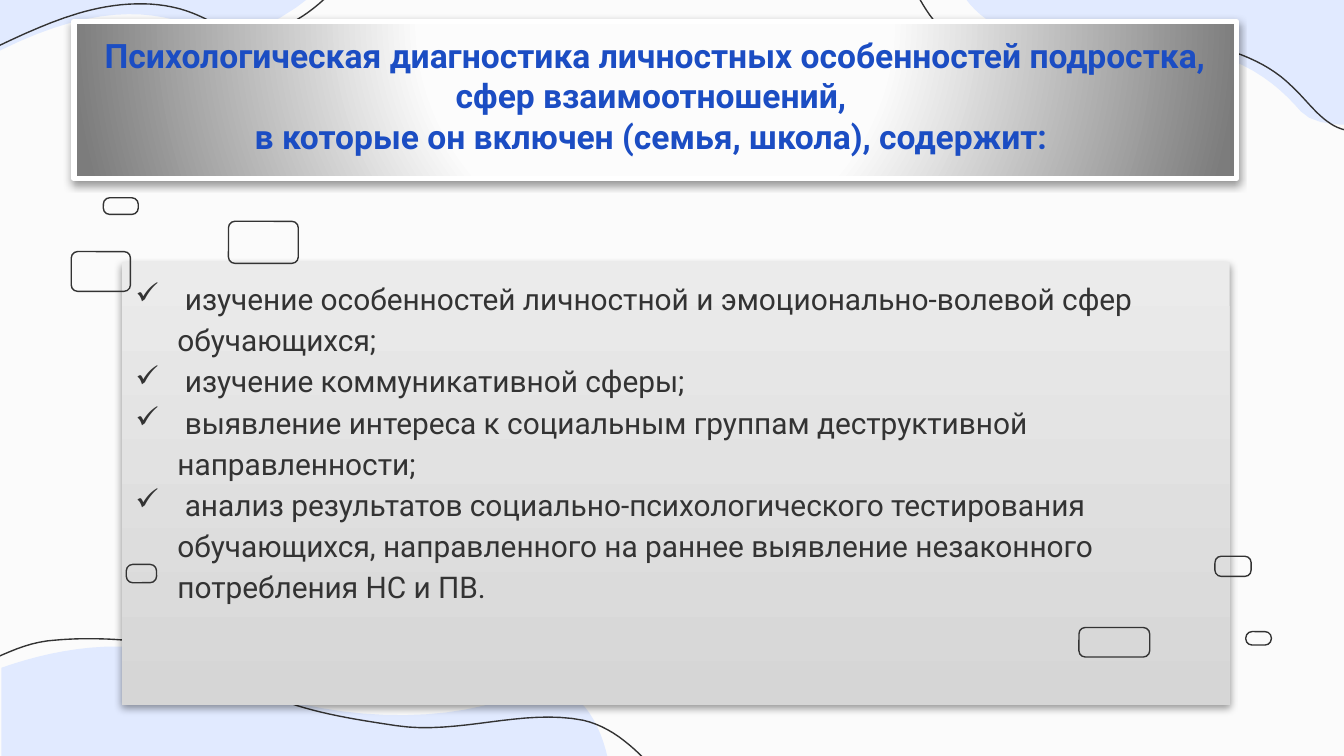
from lxml.etree import SubElement
from pptx import Presentation
from pptx.dml.color import RGBColor
from pptx.enum.shapes import MSO_SHAPE
from pptx.enum.text import MSO_ANCHOR, PP_ALIGN
from pptx.oxml.ns import qn
from pptx.util import Pt

COLORS = {
    "background": "FBFBFB", "wave": "E1EAFF", "ink": "333333", "title": "1B4DC3",
    "frame": "FFFFFF", "glow": "FCFCFC", "steel": "7C7C7C",
    "panel_top": "EBEBEB", "panel_bottom": "D6D6D6", "shadow": "000000",
}

WAVES = [
    [(513.4, -7.2), (517.7, 2.2), (535.7, 27.4), (588.2, 23.8), (652.3, 19.4), (679, 38.9),
     (697, 59.8), (715, 79.9), (820, 57.6), (820, -7.2)],
    [(0.7, 409), (109, 409), (218, 409), (326.2, 409), (322.6, 391), (311, 357.8),
     (277.2, 372.2), (231.8, 391), (158.4, 385.2), (109.4, 357.8), (71.3, 336.2),
     (20.9, 350.6), (0.7, 357.8)],
    [(-81.4, 28.1), (-74.2, 34.6), (-47.5, 51.1), (-0.7, 27.4), (56.9, -1.4), (88.6, 6.5),
     (113.8, 18), (138.2, 29.5), (226.1, -32.4), (200.9, -91.4)],
]
OUTLINES = [
    [(771.8, 60.5), (756, 68.4), (735.8, 74.9), (718.6, 69.1), (707.8, 65.5), (700.6, 54),
     (691.9, 46.1), (677.5, 31.7), (655.2, 24.5), (635, 22.3), (595.4, 18), (554.4, 28.8),
     (515.5, 20.9), (501.1, 18), (493.2, 0.7), (486.7, -12.2)],
    [(-37.4, 364.3), (-15.1, 362.2), (2.9, 346.3), (25.2, 343.4), (43.9, 341.3), (64.1, 342),
     (83.5, 344.9), (105.1, 347), (122.4, 360), (141.8, 371.5), (164.2, 381.6),
     (188.6, 385.2), (212.4, 388.8), (245.5, 393.8), (280.1, 379.4), (312.5, 385.9),
     (331.2, 390.2), (344.2, 405.4), (357.1, 419)],
    [(182.9, -10.1), (171.4, 3.6), (154.8, 16.6), (136.8, 18), (125.3, 19.4), (114.5, 11.5),
     (103.7, 7.2), (84.2, -0.7), (61.2, 1.4), (41.8, 7.2), (3.6, 18.7), (-33.1, 44.6),
     (-68.4, 52.6), (-82.8, 55.4), (-97.2, 43.2), (-108, 33.1)],
]
RIGHT_TILES = [(578, 336.2, 37.9, 15.8), (650.9, 298, 19.4, 10.8), (667.4, 338.4, 13.7, 7.2)]
LEFT_TILES = [(67.7, 302.4, 16.2, 9.8), (122.4, 118.6, 37.4, 22.5),
              (55.4, 106, 18.7, 8.9), (38.2, 134.8, 31.7, 21.3)]

TITLE_LINES = [
    "Психологическая диагностика личностных особенностей подростка, сфер взаимоотношений, ",
    "в которые он включен (семья, школа), содержит: ",
]
TASKS = [
    " изучение особенностей личностной и эмоционально-волевой сфер обучающихся;",
    " изучение коммуникативной сферы;",
    " выявление интереса к социальным группам деструктивной направленности;",
    " анализ результатов социально-психологического тестирования обучающихся, "
    "направленного на раннее выявление незаконного потребления НС и ПВ.",
]


def rgb(name):
    return RGBColor.from_string(COLORS[name])


def trace(nodes, steps=16):
    points = [nodes[0]]
    for first in range(0, len(nodes) - 1, 3):
        a, b, c, d = nodes[first:first + 4]
        for step in range(1, steps + 1):
            t = step / steps
            u = 1 - t
            points.append(tuple(
                u**3 * a[i] + 3 * u * u * t * b[i] + 3 * u * t * t * c[i] + t**3 * d[i]
                for i in (0, 1)))
    return [(Pt(x), Pt(y)) for x, y in points]


class Board:
    """Draws styled elements on the current slide."""

    font = "Roboto"

    def __init__(self, slide):
        self.slide = slide
        slide.background.fill.solid()
        slide.background.fill.fore_color.rgb = rgb("background")

    def outline(self, shape):
        shape.shadow.inherit = False
        shape.fill.background()
        shape.line.color.rgb = rgb("ink")
        shape.line.width = Pt(0.75)

    def curve(self, nodes, filled):
        start, *rest = trace(nodes)
        builder = self.slide.shapes.build_freeform(*start)
        builder.add_line_segments(rest, close=filled)
        curve = builder.convert_to_shape()
        self.outline(curve)
        if filled:
            curve.fill.solid()
            curve.fill.fore_color.rgb = rgb("wave")
            curve.line.fill.background()

    def tiles(self, boxes):
        group = self.slide.shapes.add_group_shape()
        for box in boxes:
            tile = group.shapes.add_shape(MSO_SHAPE.ROUNDED_RECTANGLE, *map(Pt, box))
            tile.adjustments[0] = min(0.5, 3.4 / min(box[2:]))
            self.outline(tile)

    def panel(self, box, stops, radial=False):
        panel = self.slide.shapes.add_textbox(*map(Pt, box))
        frame = panel.text_frame
        frame.word_wrap = True
        frame.vertical_anchor = MSO_ANCHOR.TOP
        frame.margin_left = frame.margin_right = Pt(7.2)
        frame.margin_top = frame.margin_bottom = Pt(7.2)
        panel.fill.gradient()
        gradient = panel.element.spPr.find(qn("a:gradFill"))
        for child in list(gradient):
            gradient.remove(child)
        stop_list = SubElement(gradient, qn("a:gsLst"))
        for position, name in stops:
            stop = SubElement(stop_list, qn("a:gs"), pos=str(position * 1000))
            SubElement(stop, qn("a:srgbClr"), val=COLORS[name])
        if radial:
            circle = SubElement(gradient, qn("a:path"), path="circle")
            SubElement(circle, qn("a:fillToRect"), l="50000", t="0", r="50000", b="100000")
            panel.line.color.rgb = rgb("frame")
            panel.line.width = Pt(3)
        else:
            SubElement(gradient, qn("a:lin"), ang="5400000", scaled="0")
        effects = SubElement(panel.element.spPr, qn("a:effectLst"))
        shadow = SubElement(effects, qn("a:outerShdw"), blurRad=str(Pt(4)), dist=str(Pt(2)),
                            dir="5400000", rotWithShape="0")
        tint = SubElement(shadow, qn("a:srgbClr"), val=COLORS["shadow"])
        SubElement(tint, qn("a:alpha"), val="40000")
        return frame

    def run(self, paragraph, words, size, color, bold=False):
        run = paragraph.add_run()
        run.text = words
        run.font.name = self.font
        run.font.size = Pt(size)
        run.font.bold = bold
        run.font.color.rgb = rgb(color)

    def title(self, frame, lines):
        heading = frame.paragraphs[0]
        heading.alignment = PP_ALIGN.CENTER
        for index, line in enumerate(lines):
            if index:
                heading.add_line_break()
            self.run(heading, line, 18, "title", bold=True)

    def checklist(self, frame, items):
        for index, item in enumerate(items):
            entry = frame.add_paragraph() if index else frame.paragraphs[0]
            entry.line_spacing = 1.15
            properties = entry._p.get_or_add_pPr()
            properties.set("marL", str(Pt(22.5)))
            properties.set("indent", str(-Pt(22.5)))
            tint = SubElement(properties, qn("a:buClr"))
            SubElement(tint, qn("a:srgbClr"), val=COLORS["ink"])
            SubElement(properties, qn("a:buChar"), char="✓")
            self.run(entry, item, 16, "ink")


def main():
    deck = Presentation()
    deck.slide_width, deck.slide_height = Pt(720), Pt(405)
    board = Board(deck.slides.add_slide(deck.slide_layouts[6]))
    for wave in WAVES:
        board.curve(wave, filled=True)
    for outline in OUTLINES:
        board.curve(outline, filled=False)
    heading = board.panel((39.6, 11.5, 622.8, 84.2),
                          [(0, "glow"), (40, "glow"), (100, "steel")], radial=True)
    board.title(heading, TITLE_LINES)
    tasks = board.panel((65.5, 140.4, 593.3, 237.6), [(0, "panel_top"), (100, "panel_bottom")])
    board.checklist(tasks, TASKS)
    board.tiles(RIGHT_TILES)
    board.tiles(LEFT_TILES)
    deck.save("out.pptx")


if __name__ == "__main__":
    main()
